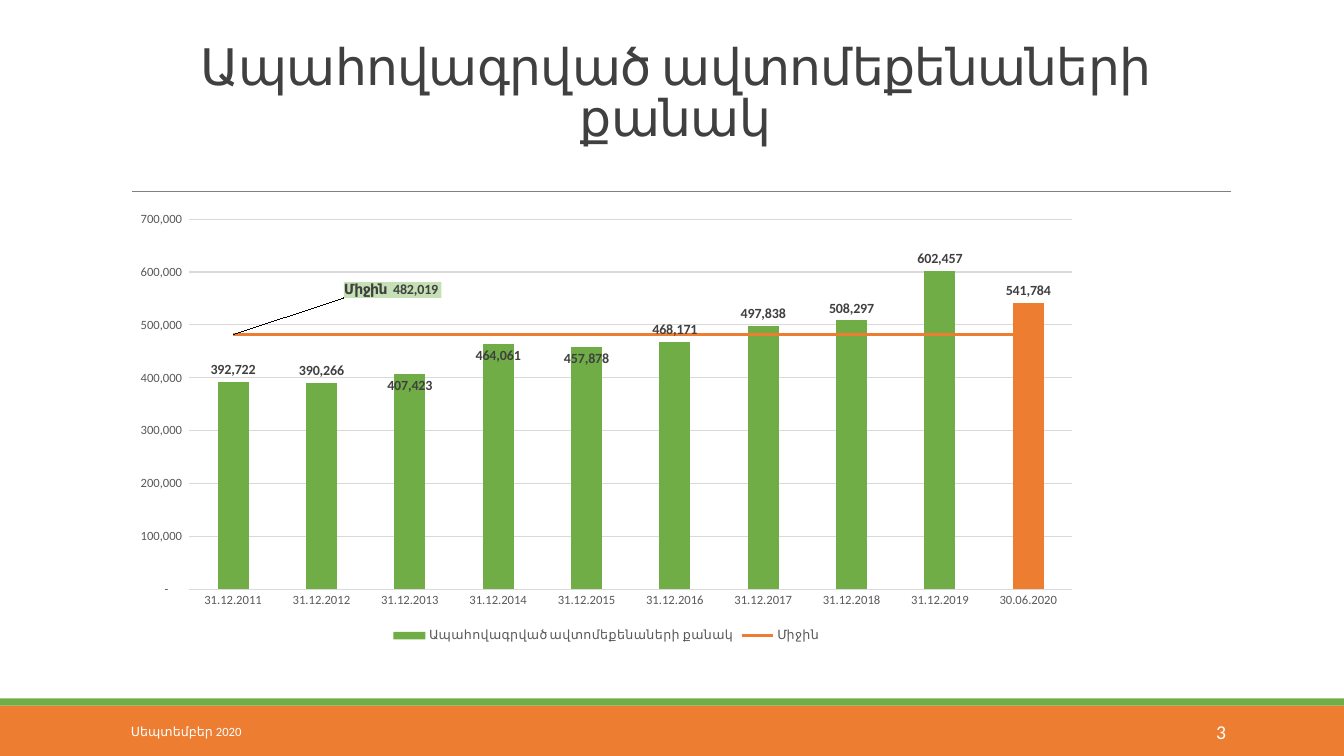
from lxml import etree
from pptx import Presentation
from pptx.chart.data import CategoryChartData
from pptx.dml.color import RGBColor
from pptx.enum import chart as ch, shapes, text
from pptx.oxml import parse_xml
from pptx.oxml.ns import nsdecls, qn
from pptx.util import Inches, Pt

W, H = 13.33, 7.5
FONT = "Calibri"
GREEN, ORANGE, GRID, GREY, DARK, WHITE = "70AD47", "ED7D31", "D9D9D9", "595959", "404040", "FFFFFF"
TITLE = "Ապահովագրված ավտոմեքենաների քանակ"
AVERAGE = "Միջին"
NUMBER = '_(* #,##0_);_(* \\(#,##0\\);_(* "-"??_);_('
DATES = [f"31.12.{year}" for year in range(2011, 2020)] + ["30.06.2020"]
CARS = [392722, 390266, 407423, 464061, 457878, 468171, 497838, 508297, 602457, 541784]
MEAN = 482019
LOWERED = (2, 3, 4)


def color(hex_code):
    """Return the colour for a hex string."""
    return RGBColor.from_string(hex_code)


def style(font, size, hex_code, bold=False):
    """Format a font."""
    font.name, font.size, font.bold = FONT, Pt(size), bold
    font.color.rgb = color(hex_code)


def write(s, words, size, hex_code, align=text.PP_ALIGN.LEFT, anchor=text.MSO_ANCHOR.MIDDLE):
    """Put one formatted paragraph into a shape and return it."""
    tf = s.text_frame
    tf.word_wrap, tf.auto_size, tf.vertical_anchor = True, text.MSO_AUTO_SIZE.NONE, anchor
    p = tf.paragraphs[0]
    p.alignment = align
    r = p.add_run()
    r.text = words
    style(r.font, size, hex_code)
    return p


def add_header(slide, x, y, w, h):
    """Place the title and the rule under it."""
    s = slide.shapes.title
    s.left, s.top, s.width, s.height = map(Inches, (x, y, w, h))
    p = write(s, TITLE, 36, DARK, text.PP_ALIGN.CENTER, text.MSO_ANCHOR.BOTTOM)
    p.line_spacing = 0.85
    p.runs[0].font._element.set("spc", "-50")
    rule_y = Inches(y + h + 0.39)
    rule = slide.shapes.add_connector(
        shapes.MSO_CONNECTOR.STRAIGHT, Inches(x + 0.11), rule_y, Inches(x + w + 0.01), rule_y)
    rule.line.color.rgb, rule.line.width = color("808080"), Pt(0.5)
    etree.SubElement(rule._element.spPr, qn("a:effectLst"))


def add_footer(slide, y, stripe_h):
    """Place the two bands, the date and the slide number."""
    for top, h, fill in ((y, H - y, ORANGE), (y - stripe_h, stripe_h, GREEN)):
        s = slide.shapes.add_shape(
            shapes.MSO_SHAPE.RECTANGLE, 0, Inches(top), Inches(W), Inches(h))
        s.shadow.inherit = False
        s.fill.solid()
        s.fill.fore_color.rgb = color(fill)
        s.line.fill.background()
    for x, w, words, size, align in (
            (1.2, 2.7, "Սեպտեմբեր 2020", 9, text.PP_ALIGN.LEFT),
            (10.83, 1.43, "3", 14, text.PP_ALIGN.RIGHT)):
        s = slide.shapes.add_textbox(Inches(x), Inches(y + 0.06), Inches(w), Inches(0.4))
        write(s, words, size, WHITE, align)


def layout_xml(x, y, w=None, h=None):
    """Return a manual chart layout, with sizes for a plot area only."""
    size = "" if w is None else f'<c:w val="{w}"/><c:h val="{h}"/>'
    target = size and '<c:layoutTarget val="inner"/><c:xMode val="edge"/><c:yMode val="edge"/>'
    return parse_xml(f'<c:layout {nsdecls("c")}><c:manualLayout>{target}'
                     f'<c:x val="{x}"/><c:y val="{y}"/>{size}</c:manualLayout></c:layout>')


def move_to_line(chart):
    """Move the last column series to a line plot on the same axes and return it."""
    bars = chart.plots[0]._element
    ser = bars.findall(qn("c:ser"))[-1]
    for flag in ser.findall(qn("c:invertIfNegative")):
        ser.remove(flag)
    line = parse_xml(f'<c:lineChart {nsdecls("c")}><c:grouping val="standard"/>'
                     '<c:varyColors val="0"/><c:marker val="1"/></c:lineChart>')
    line.insert(2, ser)
    for axis in bars.findall(qn("c:axId")):
        etree.SubElement(line, qn("c:axId")).set("val", axis.get("val"))
    bars.addnext(line)
    return chart.plots[1].series[0]


def format_cars(series):
    """Colour the columns and place their labels."""
    series.format.fill.solid()
    series.format.fill.fore_color.rgb = color(GREEN)
    last = series.points[len(CARS) - 1].format.fill
    last.solid()
    last.fore_color.rgb = color(ORANGE)
    labels = series.data_labels
    labels.show_value, labels.position = True, ch.XL_LABEL_POSITION.OUTSIDE_END
    labels.number_format, labels.number_format_is_linked = NUMBER, False
    style(labels.font, 10, DARK, True)
    for i in LOWERED:
        label = series.points[i].data_label
        style(label.font, 10, DARK, True)
        label.position = ch.XL_LABEL_POSITION.INSIDE_END


def format_mean(series):
    """Format the average line and its one callout label."""
    series.smooth = False
    series.marker.style = ch.XL_MARKER_STYLE.NONE
    series.format.line.color.rgb, series.format.line.width = color(ORANGE), Pt(2.25)
    series.data_labels.show_value = False
    label = series.points[0].data_label
    style(label.font, 10, DARK, True)
    label.position = ch.XL_LABEL_POSITION.RIGHT
    dl = series._element.find(".//" + qn("c:dLbl"))
    dl.find(qn("c:idx")).addnext(layout_xml(0.11, -0.1))
    for old in dl.findall(qn("c:spPr")):
        dl.remove(old)
    dl.find(qn("c:txPr")).addprevious(parse_xml(
        f'<c:spPr {nsdecls("c", "a")}><a:solidFill><a:srgbClr val="C5E0B4"/></a:solidFill></c:spPr>'))
    dl.find(qn("c:showSerName")).set("val", "1")
    etree.SubElement(dl, qn("c:separator")).text = " "
    dl.getparent().append(parse_xml(
        f'<c:extLst {nsdecls("c")}><c:ext uri="{{CE6537A1-D6FC-4f65-9D91-7224C49458BB}}" '
        'xmlns:c15="http://schemas.microsoft.com/office/drawing/2012/chart">'
        '<c15:showLeaderLines val="1"/></c:ext></c:extLst>'))


def format_axes(chart):
    """Format both axes and the gridlines."""
    dates, values = chart.category_axis, chart.value_axis
    for axis in (dates, values):
        axis.major_tick_mark = axis.minor_tick_mark = ch.XL_TICK_MARK.NONE
        style(axis.tick_labels.font, 9, GREY)
    values.minimum_scale, values.maximum_scale, values.major_unit = 0, 700000, 100000
    values.tick_labels.number_format = NUMBER
    values.tick_labels.number_format_is_linked = False
    values.format.line.fill.background()
    for line in (dates.format.line, values.major_gridlines.format.line):
        line.color.rgb, line.width = color(GRID), Pt(0.75)


def add_cars_chart(slide, x, y, w, h):
    """Place the column chart with its average line."""
    data = CategoryChartData(number_format=NUMBER)
    data.categories = DATES
    data.add_series(TITLE, CARS)
    data.add_series(AVERAGE, [MEAN] * len(DATES))
    chart = slide.shapes.add_chart(
        ch.XL_CHART_TYPE.COLUMN_CLUSTERED, *map(Inches, (x, y, w, h)), data).chart
    style(chart.font, 10, "000000")
    chart.has_title = False
    chart.has_legend = True
    chart.legend.position = ch.XL_LEGEND_POSITION.BOTTOM
    chart.legend.include_in_layout = False
    style(chart.legend.font, 9, GREY)
    plot = chart.plots[0]
    plot.gap_width, plot.overlap, plot.vary_by_categories = 186, -25, False
    mean = move_to_line(chart)
    format_cars(plot.series[0])
    format_mean(mean)
    format_axes(chart)
    area = chart._chartSpace.chart.plotArea
    for old in area.findall(qn("c:layout")):
        area.remove(old)
    area.insert(0, layout_xml(0.07, 0.035, 0.91, 0.835))


def main():
    """Build the slide and save it."""
    prs = Presentation()
    prs.slide_width, prs.slide_height = Inches(W), Inches(H)
    slide = prs.slides.add_slide(prs.slide_layouts[5])
    add_footer(slide, 7, 0.07)
    add_header(slide, 1.2, 0.67, 11, 0.84)
    add_cars_chart(slide, 1.2, 2.02, 9.63, 4.4)
    prs.save("out.pptx")


if __name__ == "__main__":
    main()
